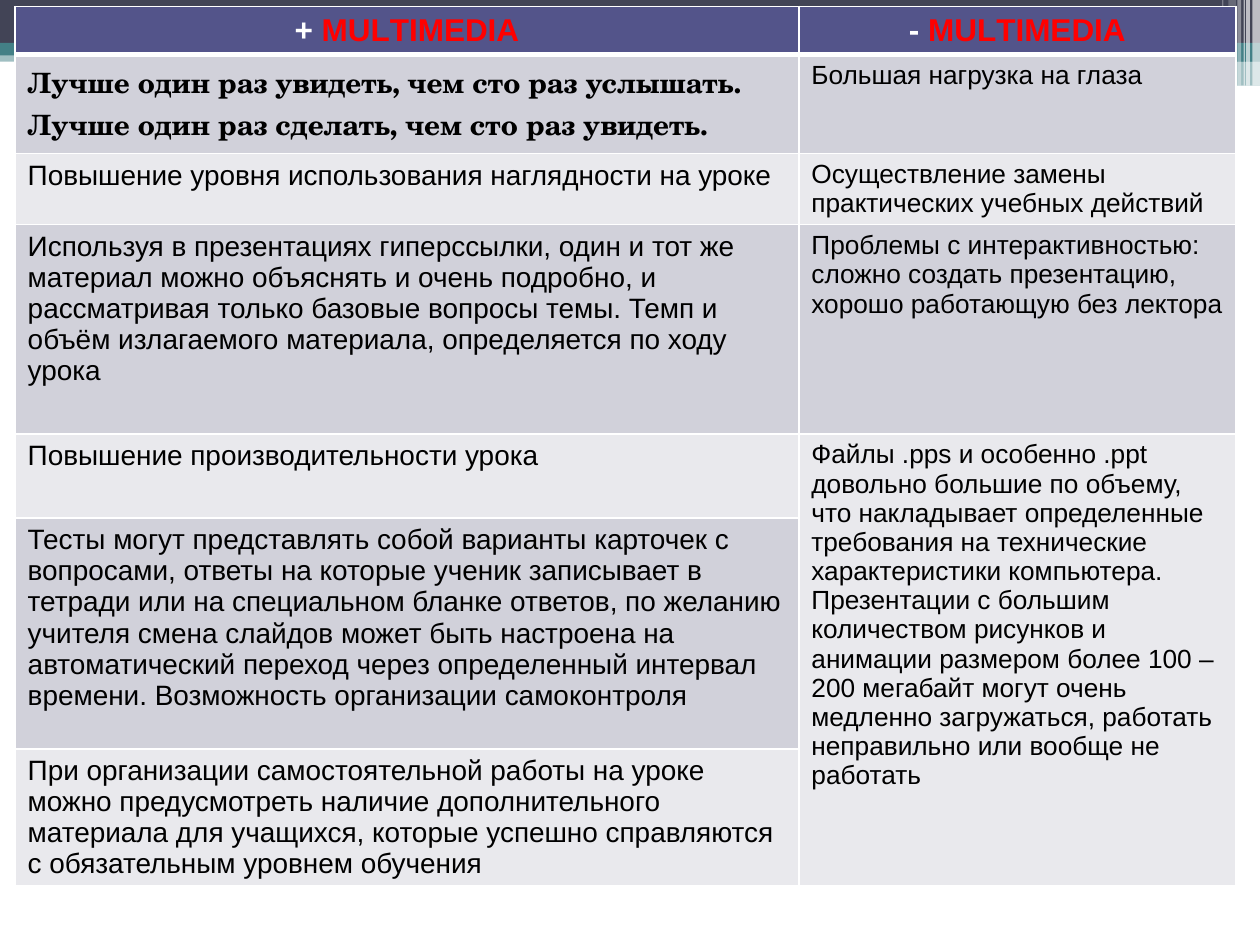
import pptx
import pptx.util
import pptx.dml.color
import pptx.enum.shapes
import pptx.enum.text
import pptx.oxml
import pptx.oxml.ns
from lxml import etree

Inches = pptx.util.Inches
Pt = pptx.util.Pt
SHAPE = pptx.enum.shapes.MSO_SHAPE

COLORS = {
    "dark": "424456", "teal": "438086", "white": "FFFFFF", "black": "000000",
    "red": "FF0000", "header": "53548A", "odd": "D1D1DA", "even": "E9E9ED",
}
HEADERS = [("+ ", "МULТIМЕDIА"), ("- ", "МULТIМЕDIА")]
COLUMN_WIDTHS = [6.22, 3.47]
ROW_HEIGHTS = [0.38, 0.79, 0.56, 1.66, 0.67, 1.83, 1.08]
PROS = [
    "Лучше один раз увидеть, чем сто раз услышать. Лучше один раз сделать, чем сто раз увидеть.",
    "Повышение уровня использования наглядности на уроке",
    "Используя в презентациях гиперссылки, один и тот же материал можно объяснять и очень подробно, "
    "и рассматривая только базовые вопросы темы. Темп и объём излагаемого материала, определяется по ходу урока",
    "Повышение производительности урока",
    "Тесты могут представлять собой варианты карточек с вопросами, ответы на которые ученик записывает "
    "в тетради или на специальном бланке ответов, по желанию учителя смена слайдов может быть настроена "
    "на автоматический переход через определенный интервал времени. Возможность организации самоконтроля ",
    "При организации самостоятельной работы на уроке можно предусмотреть наличие дополнительного материала "
    "для учащихся, которые успешно справляются с обязательным уровнем обучения",
]
CONS = [
    "Большая нагрузка на глаза",
    "Осуществление замены практических учебных действий",
    "Проблемы с интерактивностью: сложно создать презентацию, хорошо работающую без лектора",
    "Файлы .pps и особенно .ppt довольно большие по объему, что накладывает определенные требования "
    "на технические характеристики компьютера. Презентации с большим количеством рисунков и анимации "
    "размером более 100 – 200 мегабайт могут очень медленно загружаться, работать неправильно или вообще не работать",
]


def rgb(name):
    return pptx.dml.color.RGBColor.from_string(COLORS[name])


def add_bar(page, box, color, opacity=100, kind=SHAPE.RECTANGLE):
    bar = page.shapes.add_shape(kind, *[Inches(length) for length in box])
    bar.shadow.inherit = False
    bar.line.fill.background()
    bar.fill.solid()
    bar.fill.fore_color.rgb = rgb(color)
    if opacity < 100:
        tint = bar.fill._xPr.find(".//" + pptx.oxml.ns.qn("a:srgbClr"))
        etree.SubElement(tint, pptx.oxml.ns.qn("a:alpha"), val=str(opacity * 1000))


def add_banner(page, left, top, width):
    right = left + width
    for offset, height, color, opacity in [
        (0.4, 0.09, "teal", 50), (0, 0.34, "dark", 100), (0.34, 0.1, "teal", 100),
    ]:
        add_bar(page, (left, top + offset, width, height), color, opacity)
    for offset, height, opacity in [(0.39, 0.1, 100), (0.48, 0.2, 50)]:
        add_bar(page, (right - 4.08, top + offset, 4.08, height), "teal", opacity)
    for inset, offset, length, height in [(4.09, 0.54, 3.35, 0.03), (1.94, 0.64, 1.75, 0.04)]:
        add_bar(page, (right - inset, top + offset, length, height), "white", kind=SHAPE.ROUNDED_RECTANGLE)
    for inset, thickness, height, opacity in [
        (0.06, 0.06, 0.68, 65), (0.11, 0.03, 0.68, 65), (0.13, 0.01, 0.68, 60),
        (0.18, 0.03, 0.68, 40), (0.25, 0.06, 0.64, 20), (0.3, 0.01, 0.64, 30),
    ]:
        add_bar(page, (right - inset, top, thickness, height), "white", opacity)


def set_borders(cell, bottom):
    properties = cell._tc.get_or_add_tcPr()
    for position, (side, points) in enumerate([("L", 1), ("R", 1), ("T", 1), ("B", bottom)]):
        border = pptx.oxml.parse_xml(
            f'<a:ln{side} {pptx.oxml.ns.nsdecls("a")} w="{Pt(points)}"><a:solidFill>'
            f'<a:srgbClr val="{COLORS["white"]}"/></a:solidFill></a:ln{side}>')
        properties.insert(position, border)


def style_cell(cell, fill, bottom=1):
    cell.fill.solid()
    cell.fill.fore_color.rgb = rgb(fill)
    set_borders(cell, bottom)


def write_cell(cell, parts, size, colors, bold=False, font="Arial"):
    para = cell.text_frame.paragraphs[0]
    for text, color in zip(parts, colors):
        span = para.add_run()
        span.text = text
        span.font.name = font
        span.font.size = Pt(size)
        span.font.bold = bold
        span.font.color.rgb = rgb(color)
    return para


def add_comparison(page, left, top):
    frame = page.shapes.add_table(
        len(ROW_HEIGHTS), len(COLUMN_WIDTHS), Inches(left), Inches(top),
        Inches(sum(COLUMN_WIDTHS)), Inches(sum(ROW_HEIGHTS)))
    table = frame.table
    for column, width in zip(table.columns, COLUMN_WIDTHS):
        column.width = Inches(width)
    for number, height in enumerate(ROW_HEIGHTS):
        table.rows[number].height = Inches(height)
        for cell in table.rows[number].cells:
            if number == 0:
                style_cell(cell, "header", 3)
            else:
                style_cell(cell, "odd" if number % 2 else "even")
    table.cell(len(CONS), 1).merge(table.cell(len(PROS), 1))

    for column, parts in enumerate(HEADERS):
        para = write_cell(table.cell(0, column), parts, 18, ("white", "red"), bold=True)
        para.alignment = pptx.enum.text.PP_ALIGN.CENTER
    motto = write_cell(table.cell(1, 0), PROS[:1], 16, ["black"], bold=True, font="TeX Gyre Schola")
    motto.line_spacing = Pt(24.5)
    for number, text in enumerate(PROS[1:], 2):
        write_cell(table.cell(number, 0), [text], 16, ["black"])
    for number, text in enumerate(CONS, 1):
        write_cell(table.cell(number, 1), [text], 15, ["black"])


def main():
    deck = pptx.Presentation()
    deck.slide_width = Inches(10)
    deck.slide_height = Inches(7.5)
    page = deck.slides.add_slide(deck.slide_layouts[6])
    add_banner(page, 0, 0, 10)
    add_comparison(page, 0.12, 0.05)
    deck.save("out.pptx")


if __name__ == "__main__":
    main()
